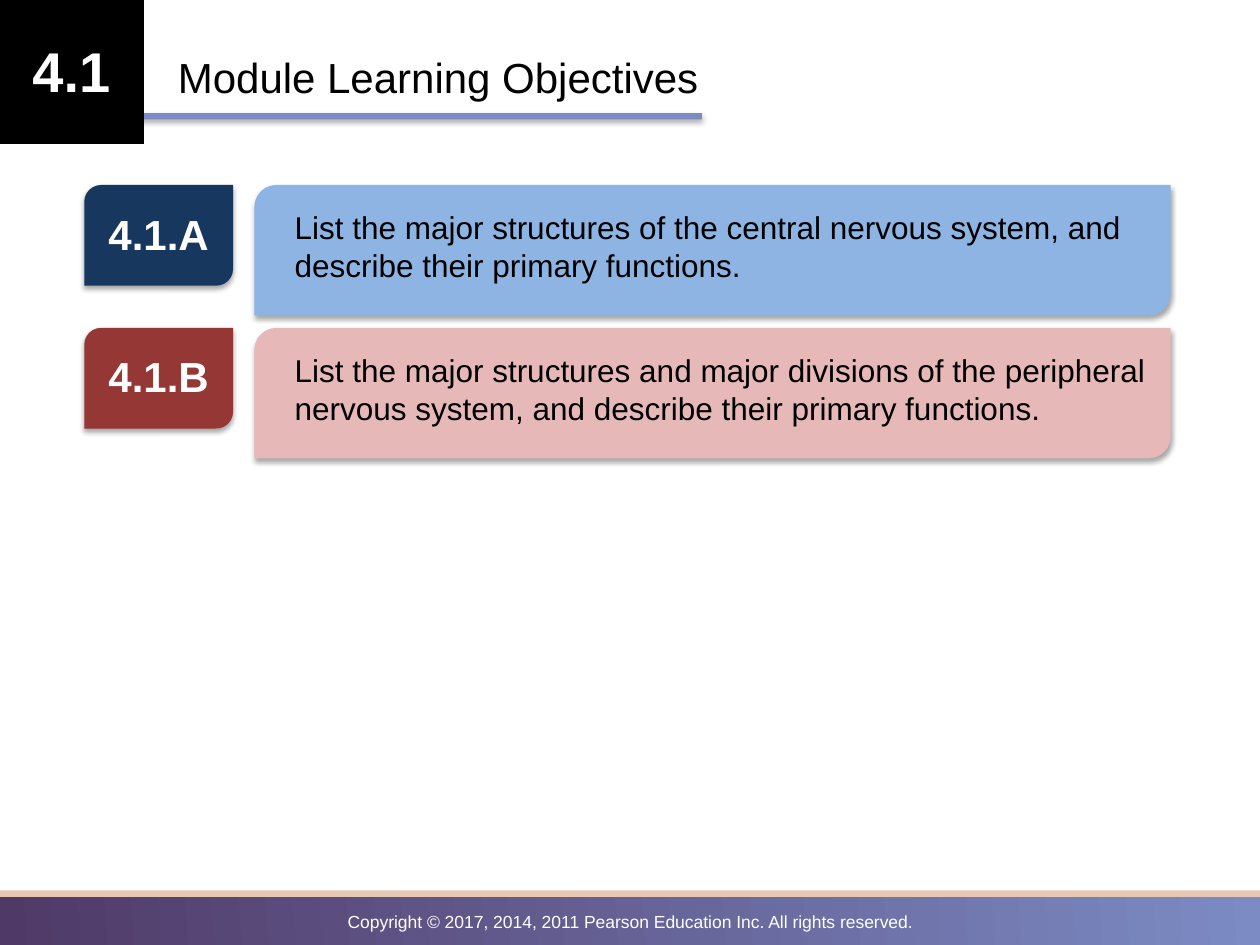
from dataclasses import dataclass

from lxml.etree import SubElement
from pptx import Presentation
from pptx.dml.color import RGBColor
from pptx.enum.shapes import MSO_SHAPE as Shape
from pptx.enum.text import MSO_ANCHOR as Anchor, PP_ALIGN as Align
from pptx.oxml.ns import qn
from pptx.util import Cm, Pt


@dataclass(frozen=True)
class Theme:
    """Colours, font and type sizes of the deck."""
    font: str = "Arial"
    black: str = "000000"
    white: str = "FFFFFF"
    violet: str = "4F3967"
    periwinkle: str = "7C8BC4"
    sand: str = "E7C8B3"
    number_size: int = 32
    title_size: int = 24
    body_size: int = 18
    footer_size: int = 10


THEME = Theme()
OBJECTIVES = [
    ("4.1.A", "17375E", "8EB4E3",
     "List the major structures of the central nervous system, "
     "and describe their primary functions."),
    ("4.1.B", "953735", "E6B9B8",
     "List the major structures and major divisions of the peripheral "
     "nervous system, and describe their primary functions."),
]


def add_shadow(shape):
    """Give a shape a soft shadow straight below it."""
    effects = shape._element.spPr.find(qn("a:effectLst"))
    shadow = SubElement(effects, qn("a:outerShdw"), blurRad="39370", dist="23000",
                        dir="5400000", rotWithShape="0")
    color = SubElement(shadow, qn("a:srgbClr"), val=THEME.black)
    SubElement(color, qn("a:alpha"), val="35000")


def add_block(page, box, color, kind=Shape.RECTANGLE, shadow=False):
    """Add a filled shape without outline; box is in centimetres."""
    shape = page.shapes.add_shape(kind, *map(Cm, box))
    shape.fill.solid()
    shape.fill.fore_color.rgb = RGBColor.from_string(color)
    shape.line.fill.background()
    shape.shadow.inherit = False
    if shadow:
        add_shadow(shape)
    return shape


def write(shape, text, size, color, bold=False, align=Align.LEFT):
    """Set and format the single paragraph of a shape."""
    frame = shape.text_frame
    frame.text = text
    frame.word_wrap = True
    frame.vertical_anchor = Anchor.TOP
    para = frame.paragraphs[0]
    para.alignment = align
    font = para.runs[0].font
    font.name, font.size, font.bold = THEME.font, Pt(size), bold
    font.color.rgb = RGBColor.from_string(color)


def add_label(page, box, *style, **options):
    """Add a text box; box is in centimetres."""
    write(page.shapes.add_textbox(*map(Cm, box)), *style, **options)


def add_footer(page, left, top, width, height):
    """Draw the gradient band, its upper edge and the copyright line."""
    band = add_block(page, (left, top, width, height), THEME.violet)
    band.fill.gradient()
    band.fill.gradient_angle = 4
    for stop, color in zip(band.fill.gradient_stops, (THEME.violet, THEME.periwinkle)):
        stop.color.rgb = RGBColor.from_string(color)
    add_block(page, (left, top - 0.03, width, 0.13), THEME.sand)
    add_label(page, (left, top + 0.26, width, 0.68),
              "Copyright © 2017, 2014, 2011 Pearson Education Inc. All rights reserved.",
              THEME.footer_size, THEME.white, align=Align.CENTER)


def add_heading(page, left, top, side, number, text):
    """Draw the module number tile, the underline and the slide title."""
    add_block(page, (left - 0.48, top + 2.3, 14.65, 0.13), THEME.periwinkle, shadow=True)
    add_block(page, (left, top, side, side), THEME.black)
    add_label(page, (left, top + 0.63, side, 1.62), number,
              THEME.number_size, THEME.white, bold=True, align=Align.CENTER)
    title = page.shapes.title
    title.left, title.top = Cm(left + 3.35), Cm(top + 0.93)
    title.width, title.height = Cm(19.58), Cm(1.27)
    write(title, text, THEME.title_size, THEME.black)


def add_objective(page, left, top, width, height, objective):
    """Draw one objective: a dark code tag and a light panel with its text."""
    code, dark, light, text = objective
    tag_width, panel_offset = 3, 3.43
    panel_left, panel_width = left + panel_offset, width - panel_offset
    add_block(page, (left, top, tag_width, 2.03), dark,
              Shape.ROUND_2_DIAG_RECTANGLE, shadow=True)
    add_label(page, (left, top + 0.34, tag_width, 1.27), code,
              THEME.title_size, THEME.white, bold=True, align=Align.CENTER)
    add_block(page, (panel_left, top, panel_width, height), light,
              Shape.ROUND_2_DIAG_RECTANGLE, shadow=True)
    add_label(page, (panel_left + 0.56, top + 0.34, panel_width - 0.71, 1.8), text,
              THEME.body_size, THEME.black)


def main():
    """Build and save the deck."""
    deck = Presentation()
    deck.slide_width, deck.slide_height = Cm(25.4), Cm(19.05)
    page = deck.slides.add_slide(deck.slide_layouts[5])
    add_footer(page, 0, 17.98, 25.4, 1.14)
    add_heading(page, -0.02, -0.02, 2.92, "4.1", "Module Learning Objectives")
    for row, objective in enumerate(OBJECTIVES):
        add_objective(page, 1.7, 3.73 + row * 2.88, 21.9, 2.63, objective)
    deck.save("out.pptx")


if __name__ == "__main__":
    main()
